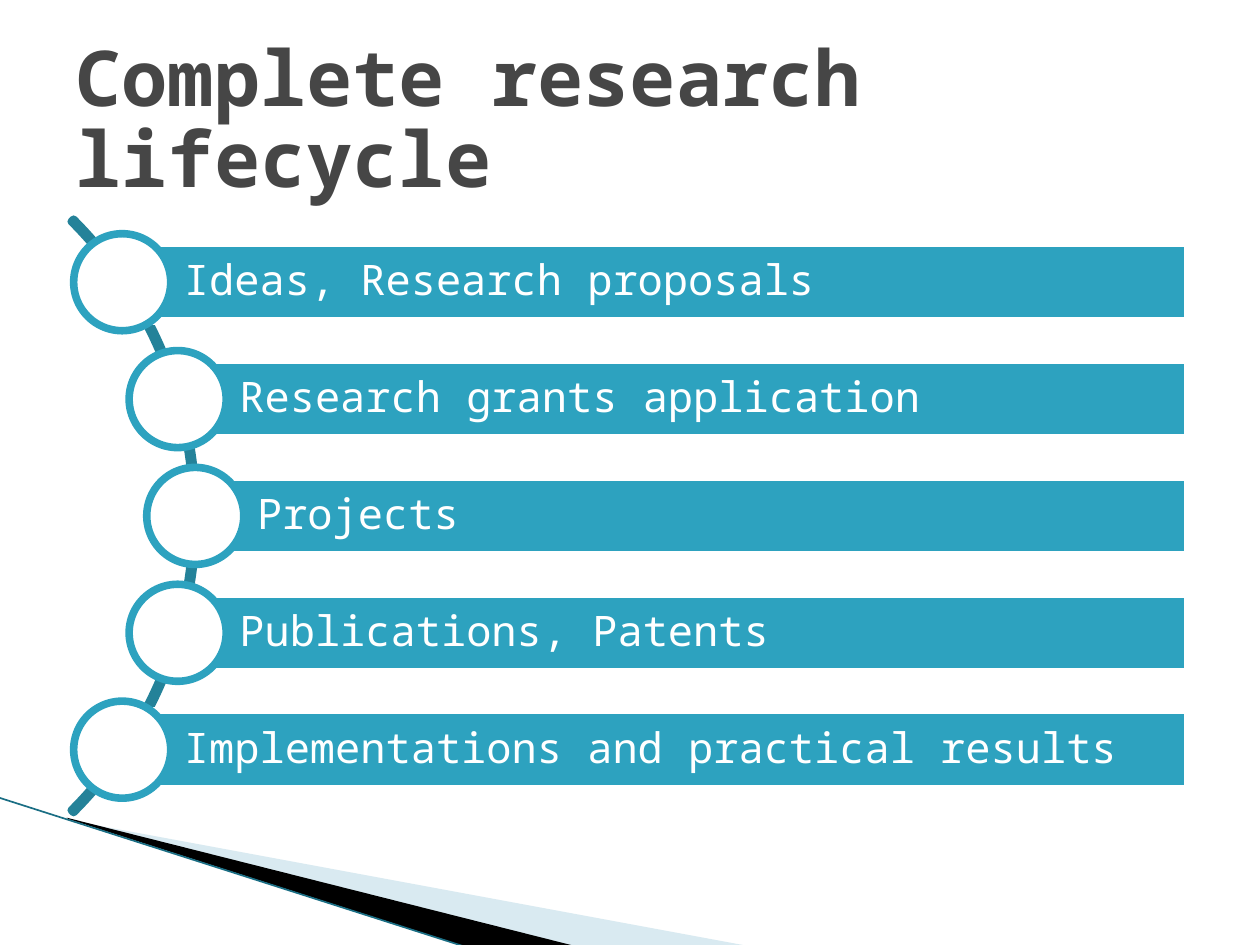
import pptx
import pptx.util
import pptx.dml.color
import pptx.enum.shapes
import pptx.enum.text
from lxml import etree
from pptx.oxml.ns import qn

Inches, Pt = pptx.util.Inches, pptx.util.Pt
RGBColor = pptx.dml.color.RGBColor
MSO_SHAPE = pptx.enum.shapes.MSO_SHAPE
PP_ALIGN = pptx.enum.text.PP_ALIGN
MSO_ANCHOR = pptx.enum.text.MSO_ANCHOR

WHITE = RGBColor(0xFF, 0xFF, 0xFF)
BLACK = RGBColor(0, 0, 0)
TEAL = RGBColor(0x2D, 0xA2, 0xBF)
DARK_TEAL = RGBColor(0x24, 0x82, 0x99)
EDGE_TEAL = RGBColor(0x1A, 0x6E, 0x84)
PALE_BLUE = RGBColor(0xA0, 0xCB, 0xDC)
GREY = RGBColor(0x46, 0x46, 0x46)
FONT = "Noto Sans Mono"
OUTLINE = Pt(4.33)

# Stage text and the bar's indent from the left of the list
STAGES = [
    ("Ideas, Research proposals", 0.39),
    ("Research grants application", 0.83),
    ("Projects", 0.97),
    ("Publications, Patents", 0.83),
    ("Implementations and practical results", 0.39),
]


def add_outlined(slide, kind, left, top, width, height, fill, line):
    s = slide.shapes.add_shape(kind, left, top, width, height)
    s.shadow.inherit = False
    if fill is None:
        s.fill.background()
    else:
        s.fill.solid()
        s.fill.fore_color.rgb = fill
    s.line.color.rgb = line
    s.line.width = OUTLINE
    return s


def add_wedge(slide, points, color, alpha=None):
    """Filled polygon; points are in inches, alpha in percent."""
    corners = [(Inches(x), Inches(y)) for x, y in points]
    builder = slide.shapes.build_freeform(*corners[0])
    builder.add_line_segments(corners[1:], close=True)
    s = builder.convert_to_shape()
    s.shadow.inherit = False
    s.line.fill.background()
    s.fill.solid()
    s.fill.fore_color.rgb = color
    if alpha is not None:
        clr = s.fill._xPr.find(qn("a:solidFill"))[0]
        etree.SubElement(clr, qn("a:alpha")).set("val", str(alpha * 1000))


def add_corner_decoration(slide, left, top):
    def place(*points):
        return [(left + x, top + y) for x, y in points]

    add_wedge(slide, place((0.55, 0.18), (5.95, 1.18), (4.56, 1.18), (0.55, 0.17)),
              PALE_BLUE, 40)
    add_wedge(slide, place((0.53, 0.16), (4.57, 1.18), (3.72, 1.19), (0.54, 0.17)), BLACK)
    edge = slide.shapes.add_connector(
        pptx.enum.shapes.MSO_CONNECTOR.STRAIGHT,
        Inches(left - 0.01), Inches(top), Inches(left + 3.71), Inches(top + 1.19))
    edge.line.color.rgb = EDGE_TEAL
    edge.line.width = Pt(0.95)
    etree.SubElement(edge._element.spPr, qn("a:effectLst"))


def add_title(slide, left, top, width, height):
    title = slide.shapes.title
    title.left, title.top, title.width, title.height = left, top, width, height
    tf = title.text_frame
    tf.text = "Complete research lifecycle"
    tf.word_wrap = True
    tf.auto_size = pptx.enum.text.MSO_AUTO_SIZE.NONE
    tf.vertical_anchor = MSO_ANCHOR.MIDDLE
    tf.margin_top = Inches(0.15)
    p = tf.paragraphs[0]
    p.alignment = PP_ALIGN.LEFT
    p.line_spacing = 0.87
    p.font.name, p.font.size, p.font.bold = FONT, Pt(44), True
    p.font.color.rgb = GREY


def add_stage(slide, text, left, top, width, height):
    """Bar with its text, and a circle centred on the bar's left end."""
    bar = add_outlined(slide, MSO_SHAPE.RECTANGLE, left, top, width, height, TEAL, WHITE)
    tf = bar.text_frame
    tf.text = text
    tf.word_wrap = True
    tf.vertical_anchor = MSO_ANCHOR.MIDDLE
    tf.margin_left = Inches(0.49)
    tf.margin_right = tf.margin_top = tf.margin_bottom = Inches(0.07)
    p = tf.paragraphs[0]
    p.alignment = PP_ALIGN.LEFT
    p.line_spacing = 0.9
    p.font.name, p.font.size = FONT, Pt(24)
    p.font.color.rgb = WHITE

    size = Inches(0.77)
    add_outlined(slide, MSO_SHAPE.OVAL, left - size // 2, top + (height - size) // 2,
                 size, size, WHITE, TEAL)


def add_curved_list(slide, left, top, width, height):
    diameter = Inches(6.66)
    arc = add_outlined(slide, MSO_SHAPE.BLOCK_ARC, left - Inches(5.68),
                       top + (height - diameter) // 2, diameter, diameter, None, DARK_TEAL)
    for i, value in enumerate((189, 27, 0.004)):
        arc.adjustments[i] = value

    bar_height = Inches(0.62)
    step = (height - bar_height) / (len(STAGES) - 1)
    for i, (text, indent) in enumerate(STAGES):
        add_stage(slide, text, left + Inches(indent), top + round(i * step),
                  width - Inches(indent), bar_height)


def main():
    prs = pptx.Presentation()
    prs.slide_width, prs.slide_height = Inches(10), Inches(7.5)
    slide = prs.slides.add_slide(prs.slide_layouts[5])
    add_corner_decoration(slide, 0, 6.33)
    add_curved_list(slide, Inches(0.58), Inches(1.93), Inches(8.85), Inches(4.33))
    add_title(slide, Inches(0.5), Inches(0.3), Inches(9), Inches(1.25))
    prs.save("out.pptx")


if __name__ == "__main__":
    main()
